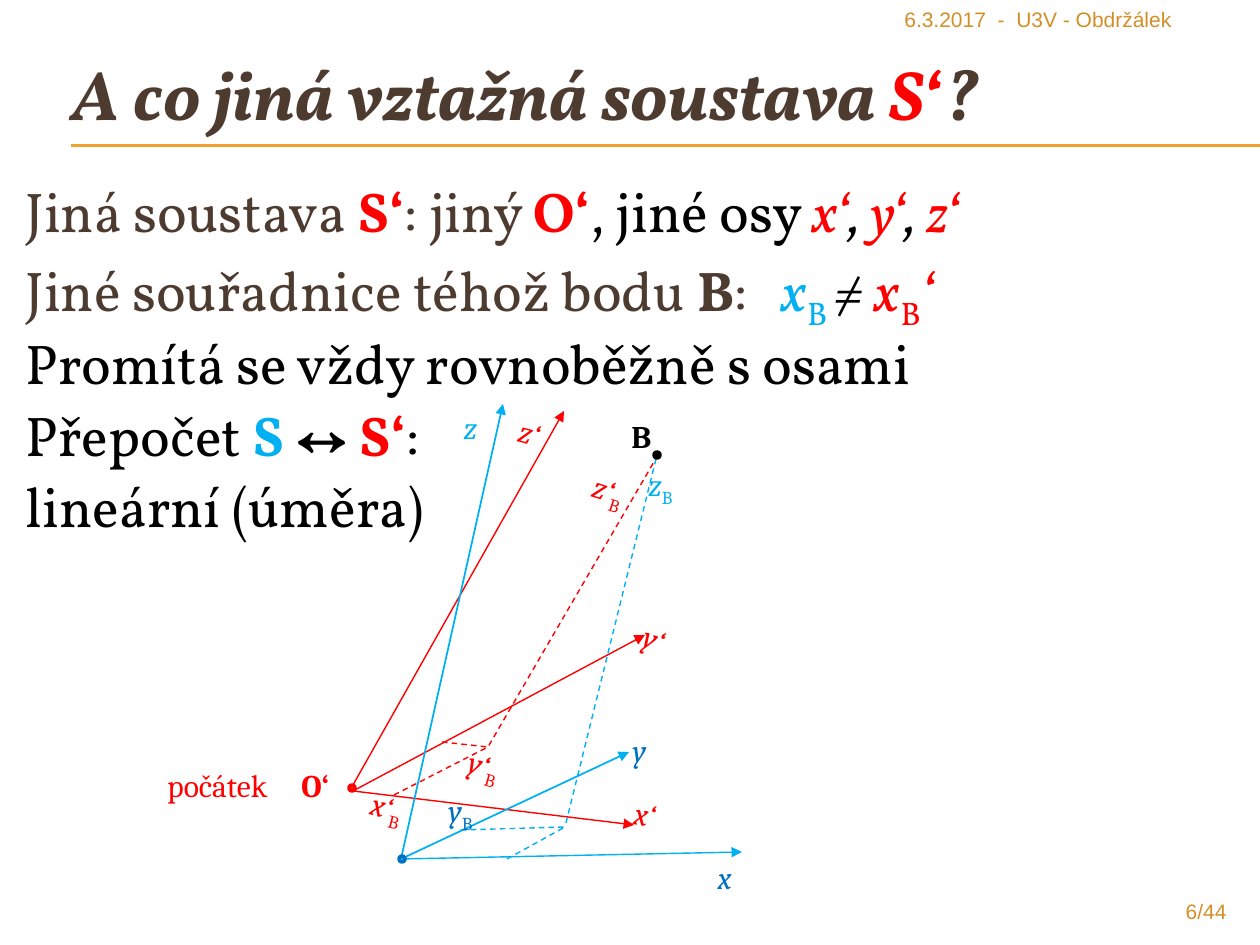
from pptx import Presentation
from pptx.dml.color import RGBColor
from pptx.enum import dml, shapes, text
from pptx.oxml.ns import qn
from pptx.util import Emu, Pt
from lxml import etree

BLACK = RGBColor(0x00, 0x00, 0x00)
BROWN = RGBColor(0x4E, 0x3B, 0x30)
RED = RGBColor(0xFF, 0x00, 0x00)
ORANGE_RED = RGBColor(0xFF, 0x33, 0x00)
CYAN = RGBColor(0x00, 0xB0, 0xF0)
BLUE = RGBColor(0x00, 0x70, 0xC0)
GOLD = RGBColor(0xF0, 0xA2, 0x2E)
OCHRE = RGBColor(0xD3, 0x8E, 0x27)

# Runs: text, colour, style (b bold, i italic, s subscript), extra spacing in pt
TITLE = [[("A co jiná vztažná soustava ", BROWN, "bi"), ("S‘", RED, "bi"), ("?", BROWN, "bi")]]
BODY = [
    [("Jiná soustava ", BROWN), ("S‘", RED, "b"), (": jiný ", BROWN), ("O‘", RED, "b"),
     (", jiné osy ", BLACK), ("x‘", RED, "i"), (", ", BLACK, "i"), ("y‘", RED, "i"),
     (", ", BLACK, "i"), ("z‘", RED, "i")],
    [("Jiné souřadnice téhož bodu ", BROWN), ("B", BROWN, "b"), (":", BROWN),
     (" ", BROWN, "", 12.6), ("x", CYAN, "i"), ("B ", CYAN, "s"), ("≠ ", BLACK, "i"),
     ("x", RED, "i"), ("B", RED, "s"), ("‘", RED, "i")],
    [("Promítá se vždy rovnoběžně s osami", BLACK)],
    [("Přepočet ", BLACK), ("S ", CYAN, "b"), ("↔ ", BLACK, "b"), ("S‘", RED, "b"), (":", BLACK)],
    [("lineární (úměra)", BLACK)],
]
DATE = [[("6.3.2017", OCHRE), (" ", OCHRE, "", 3.3), ("-", OCHRE), (" ", OCHRE, "", 3.3),
         ("U3V - Obdržálek", OCHRE)]]
PAGE = [[("6/44", OCHRE)]]

# Axes: origin, colour, ends as (x, y, width in pt)
AXES = [
    ((353, 791), RED, [(634, 825, 0.79), (645, 635, 0.79)]),
    ((353, 785), RED, [(564, 411, 0.79)]),
    ((401, 859), CYAN, [(742, 852, 0.79), (629, 752, 1), (503, 404, 1)]),
]
# Dashed projections of B: colour, foot, starts
PROJECTIONS = [
    (RED, (488, 747), [(658, 455), (442, 742), (394, 795)]),
    (CYAN, (565, 827), [(656, 459), (461, 830), (507, 859)]),
]
# Points: left, top, fill, outline
POINTS = [(349, 785, ORANGE_RED, RED), (654, 452, BLACK, BLACK), (399, 856, CYAN, BLUE)]
# Labels: left, top, width, rotation, runs
LABELS = [
    (155, 760, 134, 0, [("počátek", RED)]),
    (289, 760, 60, 0, [("O‘", RED, "b")]),
    (507, 408, 52, 14.8, [("z‘", RED, "i")]),
    (631, 617, 68, 19.8, [("y‘", RED, "i")]),
    (622, 790, 67, 9.2, [("x‘", RED, "i")]),
    (581, 466, 64, 18.1, [("z‘", RED, "i"), ("B", RED, "s")]),
    (456, 742, 71, 15.9, [("y‘", RED, "i"), ("B", RED, "s")]),
    (359, 782, 62, 14.4, [("x‘", RED, "i"), ("B", RED, "s")]),
    (636, 459, 64, 0, [("z", CYAN, "i"), ("B", CYAN, "s")]),
    (436, 785, 71, 0, [("y", BLUE, "i"), ("B", BLUE, "s")]),
    (452, 402, 24, 0, [("z", CYAN, "i")]),
    (621, 725, 24, 0, [("y", BLUE, "i")]),
    (706, 852, 24, 0, [("x", BLUE, "i")]),
    (619, 411, 47, 0, [("B", BLACK, "b")]),
]


def px(n):
    return Emu(round(n * 914400 / 126))


def place(sp, left, top, width, height):
    sp.left, sp.top, sp.width, sp.height = px(left), px(top), px(width), px(height)


def write(sp, paragraphs, size, font, align=text.PP_ALIGN.LEFT, hanging=False):
    tf = sp.text_frame
    tf.word_wrap = True
    tf.auto_size = text.MSO_AUTO_SIZE.NONE
    tf.vertical_anchor = text.MSO_ANCHOR.TOP
    for n, runs in enumerate(paragraphs):
        p = tf.add_paragraph() if n else tf.paragraphs[0]
        p.alignment = align
        if hanging:
            p.line_spacing = 0.9
            pPr = p._p.get_or_add_pPr()
            pPr.set("marL", str(px(48)))
            pPr.set("indent", str(-px(48)))
            before = etree.SubElement(pPr, qn("a:spcBef"))
            etree.SubElement(before, qn("a:spcPct"), val="20000")
            etree.SubElement(pPr, qn("a:buNone"))
        for words, color, *extra in runs:
            style = extra[0] if extra else ""
            r = p.add_run()
            r.text = words
            f = r.font
            f.name, f.size, f.color.rgb = font, Pt(size), color
            f.bold, f.italic = "b" in style, "i" in style
            rPr = r._r.get_or_add_rPr()
            if "s" in style:
                rPr.set("baseline", "-25000")
            if len(extra) > 1:
                rPr.set("spc", str(round(extra[1] * 100)))


def add_text(left, top, width, height, runs, size, font, rotation=0, **fmt):
    sp = slide.shapes.add_textbox(px(left), px(top), px(width), px(height))
    sp.rotation = rotation
    write(sp, runs, size, font, **fmt)


def add_line(start, end, color, width=0.79, dashed=False, arrow=False):
    sp = slide.shapes.add_connector(shapes.MSO_CONNECTOR.STRAIGHT,
                                    *(px(n) for n in (*start, *end)))
    sp.line.color.rgb, sp.line.width = color, Pt(width)
    if dashed:
        sp.line.dash_style = dml.MSO_LINE.DASH
    if arrow:
        etree.SubElement(sp.line._get_or_add_ln(), qn("a:tailEnd"), type="triangle")
    etree.SubElement(sp._element.spPr, qn("a:effectLst"))


prs = Presentation()
prs.slide_width, prs.slide_height = px(1260), px(945)
slide = prs.slides.add_slide(prs.slide_layouts[1])

# Title, rule below it and list
title, body = slide.placeholders
place(title, 59, 54, 994, 89)
write(title, TITLE, 40, "Vollkorn", hanging=True)
for y in (145, 146):
    add_line((71, y), (1260, y), GOLD, 0.75)
place(body, 13, 178, 1232, 748)
write(body, BODY, 32, "Vollkorn", hanging=True)

# Header and page number
add_text(892, 0, 363, 40, DATE, 12, "Arial")
add_text(1134, 892, 105, 34, PAGE, 12, "Arial", align=text.PP_ALIGN.RIGHT)

# Both coordinate systems
for origin, color, ends in AXES:
    for x, y, width in ends:
        add_line(origin, (x, y), color, width, arrow=True)
for color, foot, starts in PROJECTIONS:
    for start in starts:
        add_line(start, foot, color, dashed=True)

# Origins and point B
for left, top, fill, outline in POINTS:
    sp = slide.shapes.add_shape(shapes.MSO_SHAPE.OVAL, px(left), px(top), px(6), px(6))
    sp.shadow.inherit = False
    sp.fill.solid()
    sp.fill.fore_color.rgb = fill
    sp.line.color.rgb, sp.line.width = outline, Pt(2)

# Labels of axes and coordinates
for left, top, width, rotation, runs in LABELS:
    add_text(left, top, width, 50, [runs], 18, "Cambria", rotation)

prs.save("out.pptx")
